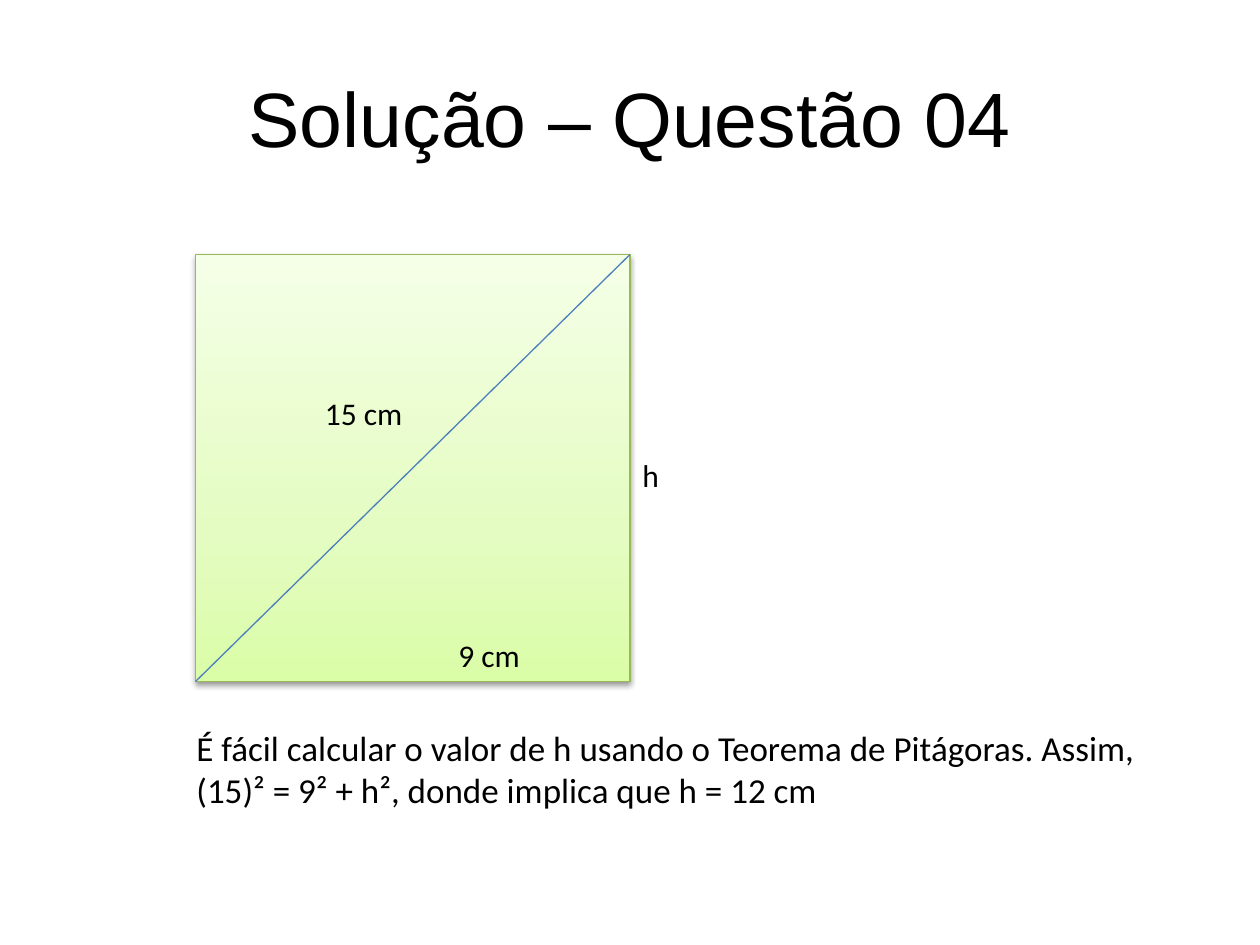
import copy

import pptx
import pptx.dml.color
import pptx.enum.shapes
import pptx.enum.text
import pptx.oxml
import pptx.oxml.ns
import pptx.util
from pptx.util import Cm

TITLE = "Solução – Questão 04"
SQUARE = (3.94, 5.13, 8.76, 8.61)
STOPS = [(0, "DAFDA7"), (0.35, "E4FCC2"), (1, "F5FFE7")]
TEXTS = [  # text, size, left, top, width, height
    ("h", 18, 12.7, 9.07, 1.8, 1.02),
    ("15 cm", 18, 6.3, 7.82, 2.21, 1.02),
    ("9 cm", 18, 8.99, 12.7, 2.21, 1.02),
    ("É fácil calcular o valor de h usando o Teorema de Pitágoras. Assim, "
     "(15)² = 9² + h², donde implica que h = 12 cm", 20, 3.71, 14.53, 19.81, 1.96),
]
SHADOW = (
    f'<a:outerShdw {pptx.oxml.ns.nsdecls("a")} blurRad="{pptx.util.Pt(3.1)}" '
    f'dist="{pptx.util.Pt(1.6)}" dir="5400000" rotWithShape="0">'
    '<a:srgbClr val="000000"><a:alpha val="38000"/></a:srgbClr></a:outerShdw>'
)


def rgb(value):
    return pptx.dml.color.RGBColor.from_string(value)


def write(tf, text, size, font):
    r = tf.paragraphs[0].add_run()
    r.text = text
    r.font.color.rgb = rgb("000000")
    for key, value in {"size": pptx.util.Pt(size), "name": font}.items():
        setattr(r.font, key, value)


def style_line(line, color):
    line.color.rgb = rgb(color)
    line.width = pptx.util.Pt(0.75)


def fill_gradient(sp):
    """Fill a shape with STOPS, running from bottom to top."""
    sp.fill.gradient()
    sp.fill.gradient_angle = 90
    stop_list = sp._element.spPr.find(".//" + pptx.oxml.ns.qn("a:gsLst"))
    stop_list.insert(1, copy.deepcopy(stop_list[0]))
    for stop, (position, color) in zip(sp.fill.gradient_stops, STOPS):
        stop.position = position
        stop.color.rgb = rgb(color)


prs = pptx.Presentation()
prs.slide_width, prs.slide_height = Cm(25.4), Cm(19.05)
s = prs.slides.add_slide(prs.slide_layouts[5])

title = s.shapes.title
box = {"left": 1.27, "top": 0.76, "width": 22.86, "height": 3.18}
for key, value in box.items():
    setattr(title, key, Cm(value))
title.text_frame.vertical_anchor = pptx.enum.text.MSO_ANCHOR.MIDDLE
title.text_frame.paragraphs[0].alignment = pptx.enum.text.PP_ALIGN.CENTER
write(title.text_frame, TITLE, 44, "Arial")

left, top, width, height = map(Cm, SQUARE)
square = s.shapes.add_shape(
    pptx.enum.shapes.MSO_SHAPE.RECTANGLE, left, top, width, height)
fill_gradient(square)
style_line(square.line, "98B955")
square.shadow.inherit = False
effects = square._element.spPr.find(pptx.oxml.ns.qn("a:effectLst"))
effects.append(pptx.oxml.parse_xml(SHADOW))

for text, size, *place in TEXTS:
    tf = s.shapes.add_textbox(*map(Cm, place)).text_frame
    tf.word_wrap = True
    tf.auto_size = pptx.enum.text.MSO_AUTO_SIZE.SHAPE_TO_FIT_TEXT
    write(tf, text, size, "Calibri")

diagonal = s.shapes.add_connector(
    pptx.enum.shapes.MSO_CONNECTOR.STRAIGHT, left, top + height, left + width, top)
style_line(diagonal.line, "4B7EBC")
diagonal._element.spPr.append(
    pptx.oxml.parse_xml(f'<a:effectLst {pptx.oxml.ns.nsdecls("a")}/>'))

prs.save("out.pptx")
